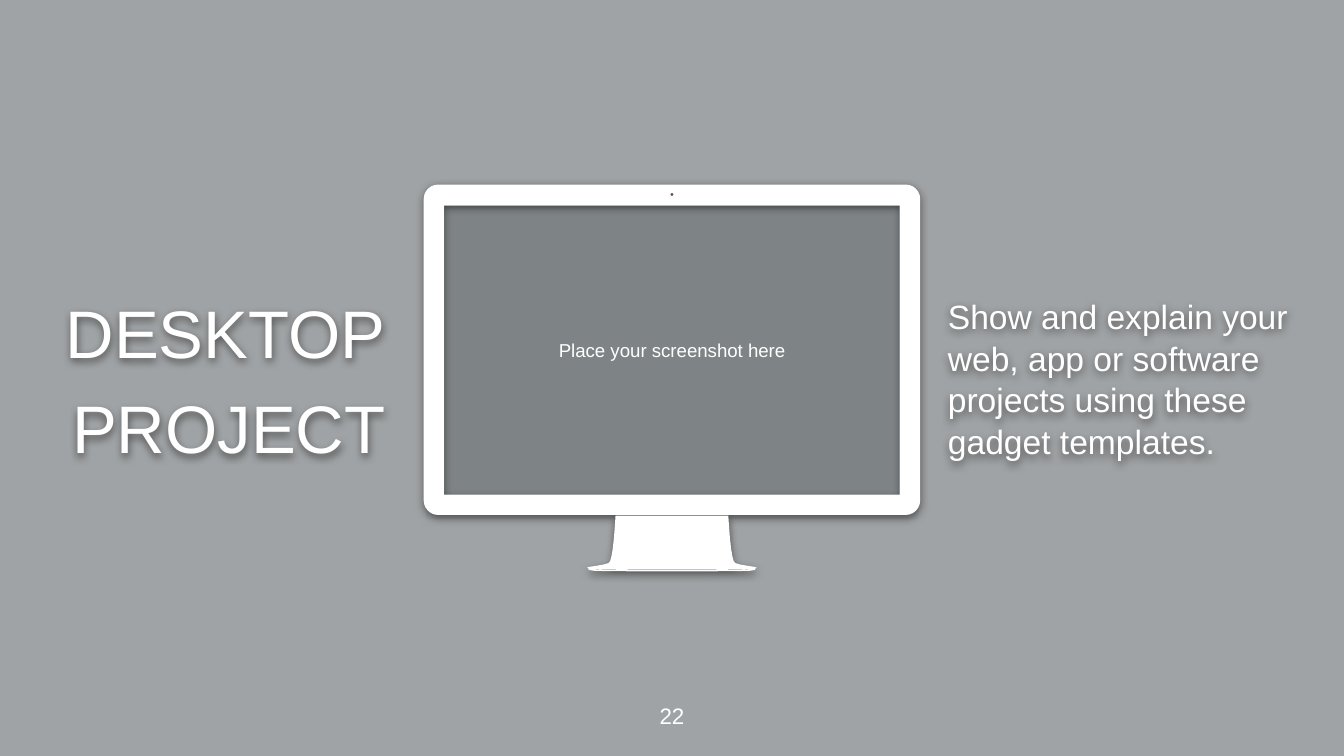
from math import cos, radians, sin

from lxml.etree import SubElement
from pptx import Presentation
from pptx.dml.color import RGBColor
from pptx.enum.shapes import MSO_SHAPE as Shape
from pptx.enum.text import MSO_ANCHOR as Anchor, MSO_AUTO_SIZE as AutoSize, PP_ALIGN as Align
from pptx.oxml.ns import qn
from pptx.util import Pt

WIDTH, HEIGHT = 720, 405
CENTER = WIDTH / 2
WHITE, INK, BACKDROP = "FFFFFF", "040E11", "CACCCD"
FONT = "Arial"

CASE_TOP, CASE_BOTTOM, CASE_HALF, CORNER = 98.9, 275.9, 133, 7.8
SCREEN_TOP, SCREEN_BOTTOM, SCREEN_HALF = 110.2, 265, 122
STAND = [(30.2, 276.2), (30.6, 282.2), (31.1, 288.7), (31.8, 294.5), (32.4, 298.1),
         (33.1, 300.6), (34, 301.7), (36.7, 302.5), (40.3, 303.1), (44.6, 303.8),
         (45.4, 304.2), (44.6, 304.7), (42.5, 304.8), (29, 305)]
BASE = [(17.3, 305.3), (36, 305.2), (44.6, 304.8), (44.6, 305.3), (41.8, 305.8),
        (35, 306), (17, 306.1)]


def color(hex_code):
    """Turn a hex string into a colour."""
    return RGBColor.from_string(hex_code)


def paint(shape, hex_code, alpha=None):
    """Give a shape a flat fill, optionally translucent, and no line or shadow."""
    shape.shadow.inherit = False
    shape.fill.solid()
    shape.fill.fore_color.rgb = color(hex_code)
    shape.line.fill.background()
    if alpha is not None:
        tint = shape._element.spPr.find(qn("a:solidFill"))[0]
        SubElement(tint, qn("a:alpha"), val=str(alpha * 1000))


def cast_shadow(shape):
    """Add a soft shadow falling straight down."""
    shape.shadow.inherit = False
    effects = shape._element.spPr.find(qn("a:effectLst"))
    shadow = SubElement(effects, qn("a:outerShdw"), blurRad=str(Pt(4.5)), dist=str(Pt(1.5)),
                        dir="5400000", algn="ctr", rotWithShape="0")
    tint = SubElement(shadow, qn("a:srgbClr"), val="000000")
    SubElement(tint, qn("a:alpha"), val="50000")


def write(shape, text, size, align, inset=0, line_spacing=None):
    """Put formatted white text in the vertical middle of a shape."""
    frame = shape.text_frame
    frame.text = text
    frame.word_wrap = True
    frame.auto_size = AutoSize.NONE
    frame.vertical_anchor = Anchor.MIDDLE
    frame.margin_left = frame.margin_right = frame.margin_top = frame.margin_bottom = Pt(inset)
    for index, paragraph in enumerate(frame.paragraphs):
        paragraph.alignment = align
        paragraph.space_before = Pt(6 if index else 0)
        if line_spacing:
            paragraph.line_spacing = line_spacing
        for run in paragraph.runs:
            run.font.size = Pt(size)
            run.font.name = FONT
            run.font.color.rgb = color(WHITE)


def add_panel(slide, left, top, width, height):
    """Add a translucent dark rectangle."""
    panel = slide.shapes.add_shape(Shape.RECTANGLE, Pt(left), Pt(top), Pt(width), Pt(height))
    paint(panel, INK, alpha=21)
    return panel


def arc(x, y, radius, start, end, steps=6):
    """List points on a circle, with angles clockwise from the right."""
    angles = [radians(start + (end - start) * step / steps) for step in range(steps + 1)]
    return [(x + radius * cos(angle), y + radius * sin(angle)) for angle in angles]


def mirrored(half):
    """Close a right half profile with its reflection, centred on the slide."""
    outline = half + [(-x, y) for x, y in reversed(half)]
    return [(Pt(CENTER + x), Pt(y)) for x, y in outline]


def add_monitor(slide):
    """Draw the desktop monitor with cut-outs for screen and camera."""
    side = CASE_HALF - CORNER
    case = (arc(side, CASE_TOP + CORNER, CORNER, -90, 0)
            + arc(side, CASE_BOTTOM - CORNER, CORNER, 0, 90))
    screen = [(SCREEN_HALF, SCREEN_TOP), (SCREEN_HALF, SCREEN_BOTTOM)]
    camera = arc(0, 104.2, 0.8, -90, 90)
    first, *others = [mirrored(half) for half in (camera, screen, case, STAND, BASE)]
    builder = slide.shapes.build_freeform(*first[0])
    builder.add_line_segments(first[1:], close=True)
    for outline in others:
        builder.move_to(*outline[0])
        builder.add_line_segments(outline[1:], close=True)
    monitor = builder.convert_to_shape()
    paint(monitor, WHITE)
    cast_shadow(monitor)


def fill_placeholder(slide, index, left, text, size, align):
    """Move a placeholder beside the monitor and fill it with shadowed text."""
    holder = slide.placeholders[index]
    slide.shapes._spTree.append(holder._element)
    holder.left, holder.top, holder.width, holder.height = Pt(left), Pt(139), Pt(188.6), Pt(126.7)
    cast_shadow(holder)
    holder.text_frame.text = text
    write(holder, text, size, align, line_spacing=1.04)
    for paragraph in holder.text_frame.paragraphs:
        properties = paragraph._p.get_or_add_pPr()
        properties.set("marL", "0")
        properties.set("indent", "0")
        SubElement(properties, qn("a:buNone"))


def main():
    """Build the slide and save it."""
    deck = Presentation()
    deck.slide_width, deck.slide_height = Pt(WIDTH), Pt(HEIGHT)
    slide = deck.slides.add_slide(deck.slide_layouts[1])
    slide.background.fill.solid()
    slide.background.fill.fore_color.rgb = color(BACKDROP)

    add_panel(slide, 0, 0, WIDTH, HEIGHT)
    add_monitor(slide)
    screenshot = add_panel(slide, CENTER - SCREEN_HALF, SCREEN_TOP,
                           2 * SCREEN_HALF, SCREEN_BOTTOM - SCREEN_TOP)
    write(screenshot, "Place your screenshot here", 10, Align.CENTER, inset=7.2)
    page_number = slide.shapes.add_textbox(Pt(338.4), Pt(361.8), Pt(43.2), Pt(43.2))
    write(page_number, "22", 12, Align.CENTER)
    fill_placeholder(slide, 0, 18, "DESKTOP\nPROJECT", 36, Align.RIGHT)
    fill_placeholder(slide, 1, 507.8, "Show and explain your web, app or software projects "
                     "using these gadget templates.", 18, Align.LEFT)
    deck.save("out.pptx")


if __name__ == "__main__":
    main()
